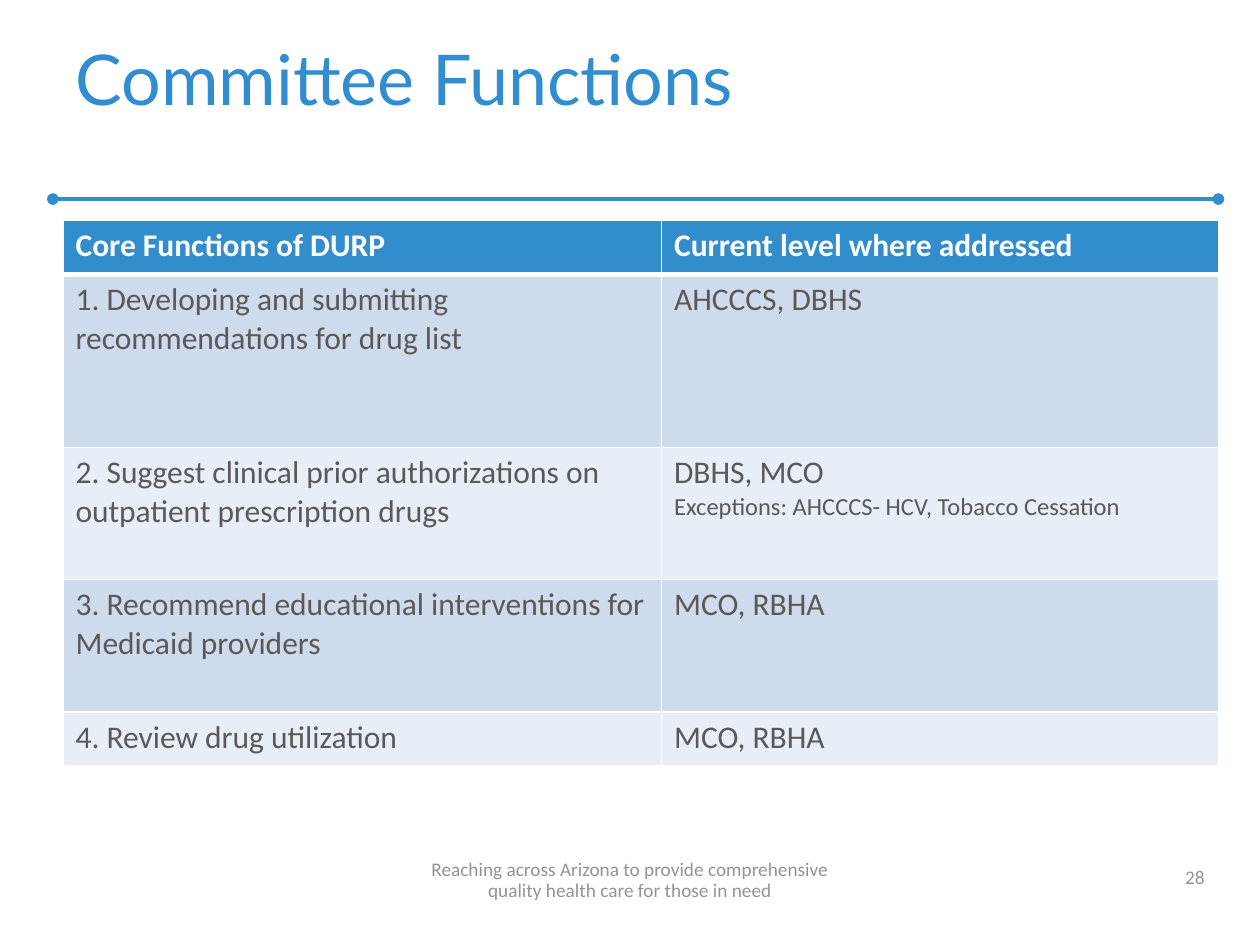
from dataclasses import dataclass
from pptx import Presentation
from pptx.dml.color import RGBColor as RGB
from pptx.enum.shapes import MSO_CONNECTOR as Conn
from pptx.enum.text import MSO_ANCHOR as Anchor, PP_ALIGN as Align
from pptx.oxml import parse_xml
from pptx.oxml.ns import nsdecls
from pptx.util import Inches, Pt
from lxml.etree import SubElement

BLUE = RGB(0x31, 0x8D, 0xCC)
TITLE = RGB(0x31, 0x8D, 0xCF)
DARK = RGB(0x59, 0x59, 0x59)
GRAY = RGB(0x93, 0x93, 0x93)
WHITE = RGB(0xFF, 0xFF, 0xFF)
BANDS = (RGB(0xCE, 0xDB, 0xEC), RGB(0xE8, 0xEE, 0xF6))
WIDE, HIGH = Inches(10), Inches(7.5)
COLS = (4.75, 4.42)


@dataclass(frozen=True)
class Style:
    size: float
    color: RGB
    font: str = "Calibri"
    bold: bool = False


@dataclass(frozen=True)
class Row:
    high: float
    left: tuple
    right: tuple


HEAD = Style(18, WHITE, bold=True)
BODY = Style(18, DARK)
NOTE = Style(14, DARK)
FOOT = Style(11, GRAY)

ROWS = (
    Row(0.43, ("Core Functions of DURP",), ("Current level where addressed",)),
    Row(1.37, ("1. Developing and submitting recommendations for drug list",),
        ("AHCCCS, DBHS",)),
    Row(1.05, ("2. Suggest clinical prior authorizations on outpatient prescription drugs",),
        ("DBHS, MCO", "Exceptions: AHCCCS- HCV, Tobacco Cessation")),
    Row(1.05, ("3. Recommend educational interventions for Medicaid providers",),
        ("MCO, RBHA",)),
    Row(0.43, ("4. Review drug utilization",), ("MCO, RBHA",)),
)


def add_run(para, text: str, style: Style) -> None:
    run = para.add_run()
    run.text = text
    font = run.font
    font.name, font.size, font.bold = style.font, Pt(style.size), style.bold
    font.color.rgb = style.color


def add_title(slide, text: str) -> None:
    title = slide.shapes.title
    title.left, title.top = Inches(0.5), Inches(0.33)
    title.width, title.height = Inches(9), Inches(0.67)
    title.text_frame.vertical_anchor = Anchor.BOTTOM
    para = title.text_frame.paragraphs[0]
    para.alignment = Align.LEFT
    add_run(para, text, Style(40, TITLE, "Lato"))


def add_rule(slide) -> None:
    y = Inches(1.58)
    rule = slide.shapes.add_connector(Conn.STRAIGHT, Inches(0.42), y, Inches(9.67), y)
    rule.line.color.rgb = BLUE
    rule.line.width = Pt(2.25)
    line = rule.line._get_or_add_ln()
    for end in ("head", "tail"):
        line.append(parse_xml(f'<a:{end}End {nsdecls("a")} type="oval"/>'))
    space = line.tag.replace("}ln", "}effectLst")
    SubElement(rule._element.spPr, space)


def add_edges(cell, base: int) -> None:
    props = cell._tc.get_or_add_tcPr()
    for side, width in (("L", 1), ("R", 1), ("T", 1), ("B", base)):
        props.append(parse_xml(
            f'<a:ln{side} {nsdecls("a")} w="{Pt(width)}"><a:solidFill>'
            f'<a:srgbClr val="{WHITE}"/></a:solidFill></a:ln{side}>'))


def fill_cell(cell, lines: tuple, index: int) -> None:
    top = index == 0
    add_edges(cell, 3 if top else 1)
    cell.fill.solid()
    cell.fill.fore_color.rgb = BLUE if top else BANDS[(index - 1) % 2]
    frame = cell.text_frame
    for place, text in enumerate(lines):
        para = frame.add_paragraph() if place else frame.paragraphs[0]
        add_run(para, text, HEAD if top else NOTE if place else BODY)


def add_grid(slide) -> None:
    high = sum(row.high for row in ROWS)
    table = slide.shapes.add_table(
        len(ROWS), len(COLS), Inches(0.5), Inches(1.75),
        Inches(sum(COLS)), Inches(high)).table
    table.horz_banding = False
    for col, width in zip(table.columns, COLS):
        col.width = Inches(width)
    for index, row in enumerate(ROWS):
        table.rows[index].height = Inches(row.high)
        for col, lines in enumerate((row.left, row.right)):
            fill_cell(table.cell(index, col), lines, index)


def add_foot(slide, left: float, width: float, high: float, align: Align, lines: tuple):
    box = slide.shapes.add_textbox(
        Inches(left), Inches(6.78), Inches(width), Inches(high))
    frame = box.text_frame
    frame.word_wrap = True
    frame.vertical_anchor = Anchor.BOTTOM
    para = frame.paragraphs[0]
    para.alignment = align
    for place, text in enumerate(lines):
        if place:
            para.add_line_break()
        add_run(para, text, FOOT)
    return para


def main() -> None:
    deck = Presentation()
    deck.slide_width, deck.slide_height = WIDE, HIGH
    slide = deck.slides.add_slide(deck.slide_layouts[5])
    add_rule(slide)
    add_title(slide, "Committee Functions")
    add_grid(slide)
    add_foot(slide, 7.33, 2.33, 0.32, Align.RIGHT, ("28",))
    motto = add_foot(slide, 0, 10, 0.42, Align.CENTER, (
        "Reaching across Arizona to provide comprehensive",
        "quality health care for those in need"))
    motto.line_spacing = Pt(12)
    deck.save("out.pptx")


if __name__ == "__main__":
    main()
